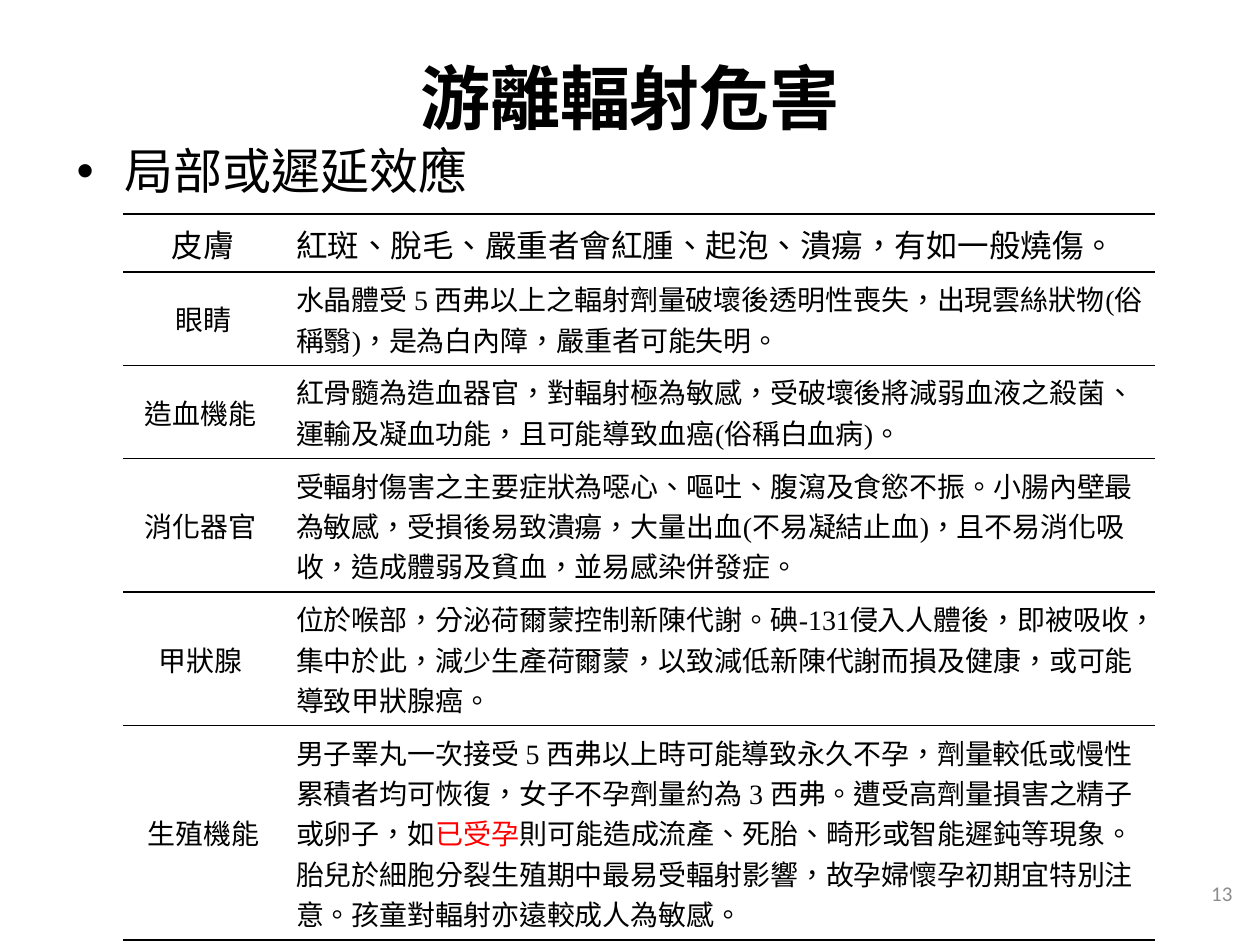
from lxml import etree
from pptx import Presentation
from pptx.dml.color import RGBColor
from pptx.enum.text import MSO_ANCHOR, PP_ALIGN
from pptx.oxml.ns import qn
from pptx.util import Inches, Pt

MID, TOP = MSO_ANCHOR.MIDDLE, MSO_ANCHOR.TOP
LEFT, CENTER, RIGHT = PP_ALIGN.LEFT, PP_ALIGN.CENTER, PP_ALIGN.RIGHT

THEME = {
    "ink": "000000", "alert": "FF0000", "muted": "8C8C8C",
    "cjk": "Noto Sans CJK SC", "serif": "Times New Roman", "sans": "Calibri",
    "title": 40, "lead": 28, "first": 18, "cell": 16, "page": 12, "rule": 1,
}

TITLE = "游離輻射危害"
LEAD = "局部或遲延效應"
PAGE = "13"

# Organ, number of text lines, then effect runs: text with any style changes
ROWS = [
    ("皮膚", 1, [("紅斑、脫毛、嚴重者會紅腫、起泡、潰瘍，有如一般燒傷。", {})]),
    ("眼睛", 2, [("水晶體受 5 西弗以上之輻射劑量破壞後透明性喪失，出現雲絲狀物"
                "(俗稱翳)，是為白內障，嚴重者可能失明。", {})]),
    ("造血機能 ", 2, [
        ("紅骨髓為造血器官，對輻射極為敏感，受破壞後將減弱血液之殺菌", {}),
        ("、", {"face": "cjk"}),
        ("運輸及凝血功能，且可能導致血癌(俗稱白血病)。", {})]),
    ("消化器官 ", 3, [
        ("受輻射傷害之主要症狀為噁心、嘔吐、腹瀉及食慾不振。小腸內壁最為敏感，"
         "受損後易致潰瘍，大量出血(不易凝結止血)，且不易消化吸收，"
         "造成體弱及貧血，並易感染併發症。", {})]),
    ("甲狀腺 ", 3, [
        ("位於喉部，分泌荷爾蒙控制新陳代謝。碘-131侵入人體後，即被吸收，"
         "集中於此，減少生產荷爾蒙，以致減低新陳代謝而損及健康，"
         "或可能導致甲狀腺癌。", {})]),
    (" 生殖機能 ", 5, [
        ("男子睪丸一次接受 5 西弗以上時可能導致永久不孕，劑量較低或慢性累積者均可恢復，"
         "女子不孕劑量約為 3 西弗。遭受高劑量損害之精子或卵子，如", {}),
        ("已受孕", {"color": "alert"}),
        ("則可能造成流產、死胎、畸形或智能遲鈍等現象。"
         "胎兒於細胞分裂生殖期中最易受輻射影響，故孕婦懷孕初期宜特別注意。"
         "孩童對輻射亦遠較成人為敏感。", {})]),
]
COLS = (1.27, 6.92)
LINE, PAD = 0.32, 0.1


def add_run(para, text, size, face="serif", color="ink", bold=False):
    run = para.add_run()
    run.text = text
    font = run.font
    font.size, font.bold, font.name = Pt(THEME[size]), bold, THEME[face]
    font.color.rgb = RGBColor.from_string(THEME[color])
    props = run._r.get_or_add_rPr()
    props.set("lang", "zh-TW")
    east = etree.Element(qn("a:ea"), typeface=THEME["cjk"])
    props.find(qn("a:latin")).addnext(east)


def add_box(slide, area, align, anchor):
    """Add a wrapping text box and return its first paragraph."""
    frame = slide.shapes.add_textbox(*map(Inches, area)).text_frame
    frame.word_wrap = True
    frame.vertical_anchor = anchor
    para = frame.paragraphs[0]
    para.alignment = align
    return para


def add_bullet(para, indent):
    props = para._p.get_or_add_pPr()
    props.set("marL", str(Inches(indent)))
    props.set("indent", str(-Inches(indent)))
    etree.SubElement(props, qn("a:buFont"), typeface="Arial")
    etree.SubElement(props, qn("a:buChar"), char="•")


def rule_cell(cell):
    """Rule the cell above and below only, with no fill."""
    cell.fill.background()
    props = cell._tc.get_or_add_tcPr()
    for spot, side in enumerate(("lnL", "lnR", "lnT", "lnB")):
        line = etree.Element(qn("a:" + side), w=str(Pt(THEME["rule"])))
        if side in ("lnT", "lnB"):
            fill = etree.SubElement(line, qn("a:solidFill"))
            etree.SubElement(fill, qn("a:srgbClr"), val=THEME["ink"])
        else:
            etree.SubElement(line, qn("a:noFill"))
        props.insert(spot, line)


def fill_cell(cell, runs, size, align):
    rule_cell(cell)
    cell.vertical_anchor = MID
    para = cell.text_frame.paragraphs[0]
    para.alignment = align
    for text, style in runs:
        add_run(para, text, size, **style)


def add_effects(slide):
    high = [PAD + LINE * lines for _, lines, _ in ROWS]
    high[0] = 0.46
    area = (0.98, 1.7, sum(COLS), sum(high))
    table = slide.shapes.add_table(
        len(ROWS), len(COLS), *map(Inches, area)).table
    table.first_row = table.horz_banding = False
    for col, width in zip(table.columns, COLS):
        col.width = Inches(width)
    for at, (organ, _, runs) in enumerate(ROWS):
        table.rows[at].height = Inches(high[at])
        size = "cell" if at else "first"
        fill_cell(table.cell(at, 0), [(organ, {})], size, CENTER)
        fill_cell(table.cell(at, 1), runs, size, LEFT)


def main():
    deck = Presentation()
    deck.slide_width, deck.slide_height = Inches(10), Inches(7.5)
    slide = deck.slides.add_slide(deck.slide_layouts[6])

    title = add_box(slide, (0.5, 0.14, 9, 1.25), CENTER, MID)
    add_run(title, TITLE, "title", "cjk", bold=True)
    lead = add_box(slide, (0.51, 1.07, 9, 0.63), LEFT, TOP)
    add_bullet(lead, 0.38)
    add_run(lead, LEAD, "lead")
    page = add_box(slide, (7.55, 6.89, 2.33, 0.4), RIGHT, MID)
    add_run(page, PAGE, "page", "sans", "muted")
    add_effects(slide)

    deck.save("out.pptx")


if __name__ == "__main__":
    main()
